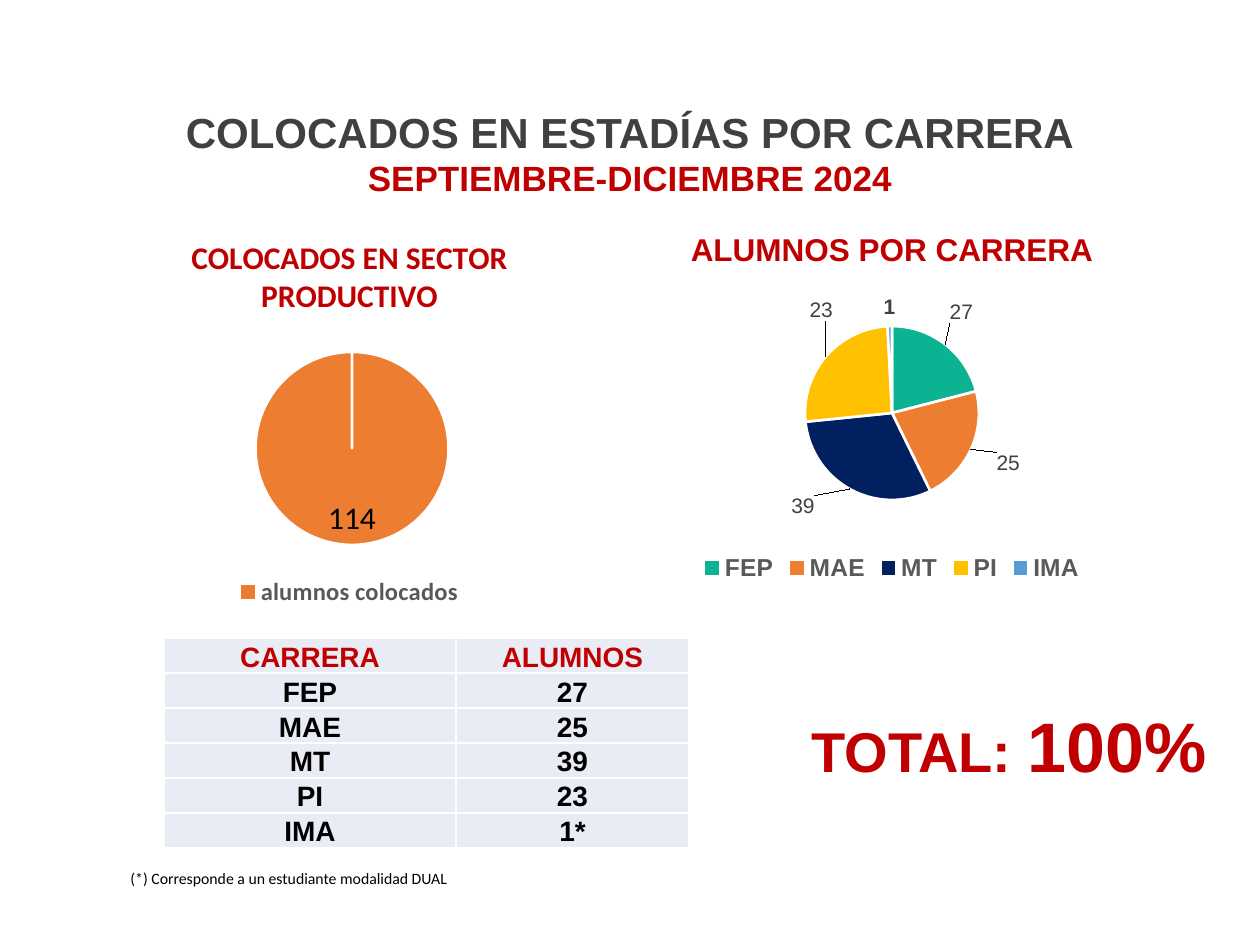
from dataclasses import dataclass

from lxml.etree import SubElement
from pptx import Presentation
from pptx.chart.data import CategoryChartData
from pptx.dml.color import RGBColor
from pptx.enum.chart import XL_CHART_TYPE, XL_LEGEND_POSITION as LEGEND, XL_LABEL_POSITION as LABEL
from pptx.enum.text import MSO_ANCHOR, PP_ALIGN
from pptx.oxml import parse_xml
from pptx.oxml.ns import nsdecls, qn
from pptx.util import Emu, Pt


@dataclass(frozen=True)
class Theme:
    red: str = "C00000"
    dark: str = "404040"
    grey: str = "595959"
    black: str = "000000"
    white: str = "FFFFFF"
    cell: str = "E9EBF5"
    sans: str = "Arial"
    body: str = "Calibri"
    heading: int = 24
    period: int = 20
    chart_title: int = 18
    legend: int = 14
    label: int = 12
    table: int = 16
    total: int = 32
    percent: int = 40
    note: int = 9


T = Theme()
PX = 914400 / 126

TITLE = [("COLOCADOS EN ESTADÍAS POR CARRERA", T.heading, T.dark),
         ("SEPTIEMBRE-DICIEMBRE 2024", T.period, T.red)]
NOTE = "(*) Corresponde a un estudiante modalidad DUAL"
ROWS = [("CARRERA", "ALUMNOS"), ("FEP", "27"), ("MAE", "25"),
        ("MT", "39"), ("PI", "23"), ("IMA", "1*")]
COLUMNS = (292, 233)
ROW_HEIGHT = 35

# A slice is: category, value, colour, label text (None shows the value), label shift.
CHARTS = [
    dict(title="ALUMNOS POR CARRERA", font=T.sans, box=(577, 209, 630, 378),
         title_at=(0.18, 0.06), plot=(0.36, 0.31, 0.28, 0.46),
         label_at=LABEL.OUTSIDE_END, label=(T.label, T.dark),
         slices=[("FEP", 26, "0CB393", "27", (0, -0.04)),
                 ("MAE", 27, "ED7D31", "25", (0.03, 0)),
                 ("MT", 38, "002060", "39", (-0.05, 0)),
                 ("PI", 32, "FFC000", "23", (0.02, -0.08)),
                 ("IMA", 1, "5B9BD5", None, None)]),
    dict(title="COLOCADOS EN SECTOR\vPRODUCTIVO", font=T.body, box=(87, 218, 525, 394),
         title_at=(0.19, 0.06), plot=(0.32, 0.34, 0.37, 0.49),
         label_at=LABEL.INSIDE_END, label=(T.chart_title, T.black),
         slices=[("alumnos colocados", 100, "ED7D31", "114", None)]),
]


def px(*values):
    return [Emu(round(v * PX)) for v in values]


def style(font, size, color, name=T.sans, bold=True):
    font.size, font.bold, font.name = Pt(size), bold, name
    font.color.rgb = RGBColor.from_string(color)


def layout_xml(**parts):
    """Manual chart layout; parts are c:manualLayout children in schema order."""
    items = "".join(f'<c:{tag} val="{val}"/>' for tag, val in parts.items())
    return parse_xml(f'<c:layout {nsdecls("c")}><c:manualLayout>{items}'
                     '</c:manualLayout></c:layout>')


def add_text(slide, box, runs):
    tf = slide.shapes.add_textbox(*px(*box)).text_frame
    tf.word_wrap = True
    for text, size, color, name, bold in runs:
        r = tf.paragraphs[0].add_run()
        r.text = text
        style(r.font, size, color, name, bold)


def add_pie(slide, chart_def):
    name, slices = chart_def["font"], chart_def["slices"]
    data = CategoryChartData()
    data.categories = [s[0] for s in slices]
    data.add_series("Series 1", [s[1] for s in slices])
    chart = slide.shapes.add_chart(XL_CHART_TYPE.PIE, *px(*chart_def["box"]), data).chart
    style(chart.font, 10, T.black, T.body, False)

    tf = chart.chart_title.text_frame
    tf.text = chart_def["title"]
    p = tf.paragraphs[0]
    style(p.font, T.chart_title, T.red, name)
    x, y = chart_def["title_at"]
    title = chart.chart_title._element
    title.find(qn("c:tx")).addnext(layout_xml(xMode="edge", yMode="edge", x=x, y=y))

    chart.has_legend = True
    chart.legend.position = LEGEND.BOTTOM
    chart.legend.include_in_layout = False
    style(chart.legend.font, T.legend, T.grey, name)

    plot = chart.plots[0]
    plot.vary_by_categories = True
    area = plot._element.getparent()
    for old in area.findall(qn("c:layout")):
        area.remove(old)
    x, y, w, h = chart_def["plot"]
    area.insert(0, layout_xml(layoutTarget="inner", xMode="edge", yMode="edge",
                              x=x, y=y, w=w, h=h))

    series = plot.series[0]
    labels = series.data_labels
    labels.show_value = True
    labels.position = chart_def["label_at"]
    style(labels.font, T.label, T.dark, name)
    leader = labels._element.find(qn("c:showLeaderLines"))
    if leader is None:
        leader = SubElement(labels._element, qn("c:showLeaderLines"))
    leader.set("val", "1")

    for i, (_, _, color, text, shift) in enumerate(slices):
        point = series.points[i]
        point.format.fill.solid()
        point.format.fill.fore_color.rgb = RGBColor.from_string(color)
        point.format.line.color.rgb = RGBColor.from_string(T.white)
        point.format.line.width = Pt(1.5)
        if text is None:
            continue
        label = point.data_label
        label.text_frame.text = text
        style(label.text_frame.paragraphs[0].runs[0].font, *chart_def["label"], name, False)
        label.position = chart_def["label_at"]
        if shift:
            dlbl = labels._element.findall(qn("c:dLbl"))[i]
            dlbl.find(qn("c:idx")).addnext(layout_xml(x=shift[0], y=shift[1]))


def add_table(slide):
    frame = slide.shapes.add_table(len(ROWS), len(COLUMNS),
                                   *px(164, 638, sum(COLUMNS), ROW_HEIGHT * len(ROWS)))
    table = frame.table
    table.first_row = table.horz_banding = False
    for column, width in zip(table.columns, COLUMNS):
        column.width = px(width)[0]
    for r, row in enumerate(ROWS):
        for c, text in enumerate(row):
            cell = table.cell(r, c)
            cell.text = text
            cell.vertical_anchor = MSO_ANCHOR.BOTTOM
            cell.margin_left = cell.margin_right = cell.margin_top = px(1)[0]
            cell.margin_bottom = 0
            cell.fill.solid()
            cell.fill.fore_color.rgb = RGBColor.from_string(T.cell)
            p = cell.text_frame.paragraphs[0]
            p.alignment = PP_ALIGN.CENTER
            style(p.font, T.table, T.black if r else T.red)


def main():
    prs = Presentation()
    prs.slide_width, prs.slide_height = px(1260, 945)
    slide = prs.slides.add_slide(prs.slide_layouts[5])

    title = slide.shapes.title
    title.left, title.top, title.width, title.height = px(118, 100, 1024, 106)
    tf = title.text_frame
    tf.vertical_anchor = MSO_ANCHOR.TOP
    tf.text = "\n".join(line[0] for line in TITLE)
    for p, (_, size, color) in zip(tf.paragraphs, TITLE):
        p.alignment = PP_ALIGN.CENTER
        style(p.font, size, color)

    add_text(slide, (799, 696, 461, 97), [("TOTAL: ", T.total, T.red, T.sans, True),
                                          ("100%", T.percent, T.red, T.sans, True)])
    add_table(slide)
    add_text(slide, (118, 863, 495, 32), [(NOTE, T.note, T.black, T.body, False)])
    for chart_def in CHARTS:
        add_pie(slide, chart_def)
    prs.save("out.pptx")


if __name__ == "__main__":
    main()
